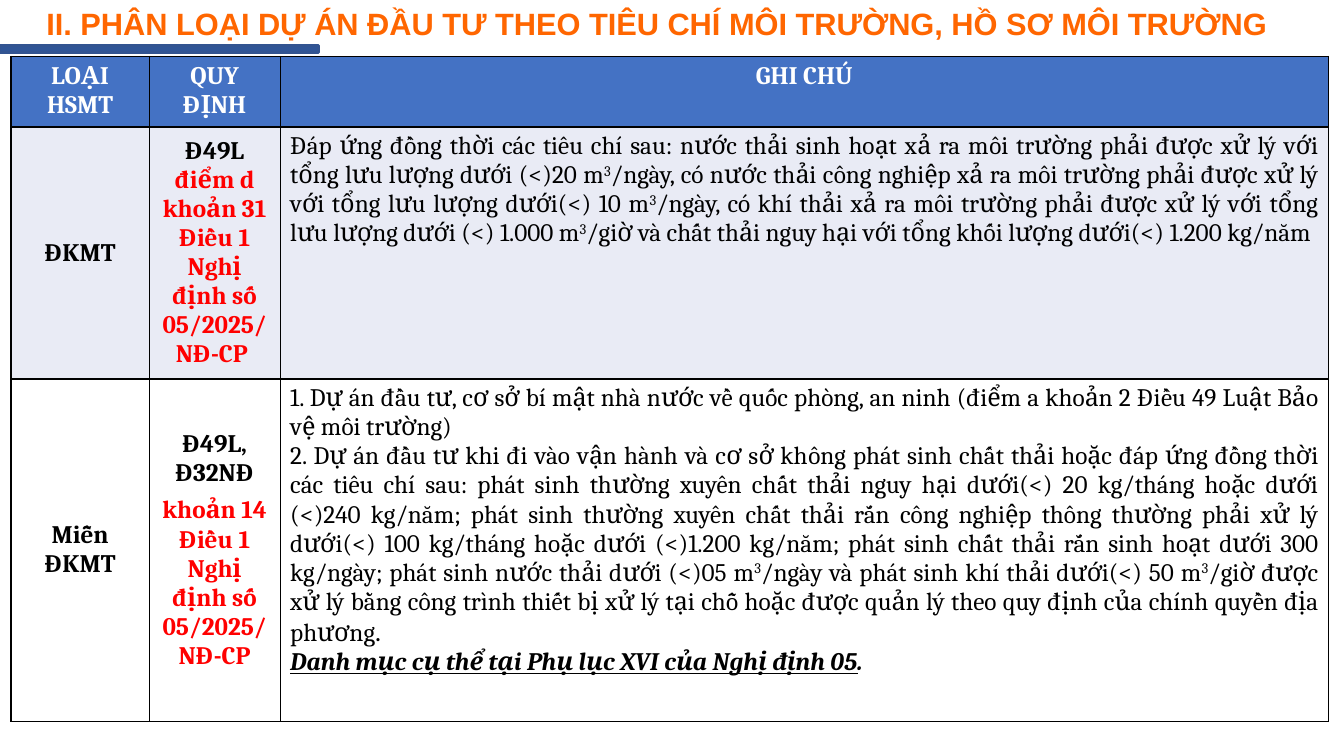
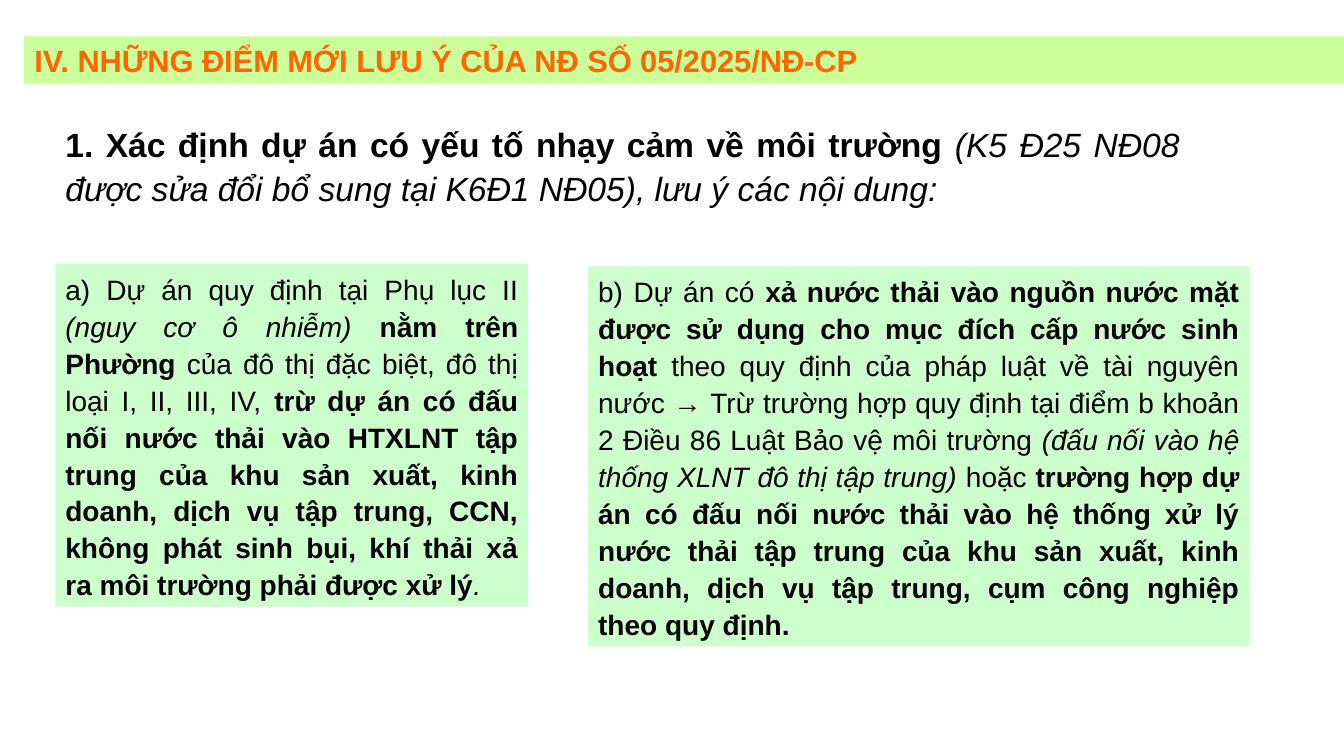
from dataclasses import dataclass

from lxml import etree
from pptx import Presentation
from pptx.dml.color import RGBColor
from pptx.enum import text as t
from pptx.enum.shapes import MSO_SHAPE
from pptx.oxml.ns import qn
from pptx.util import Pt


@dataclass(frozen=True)
class Theme:
    title: str = "FF6600"
    title_band: str = "CCFF99"
    note_fill: str = "CCFFCC"
    bar: str = "2F5597"
    bar_line: str = "325491"
    header: str = "4472C4"
    row_fills: tuple = ("E9EBF5", "FFFFFF")
    ink: str = "000000"
    white: str = "FFFFFF"
    alert: str = "FF0000"
    sans: str = "Arial"
    serif: str = "Cambria"
    alternate: str = "Lato"
    title_size: int = 22
    lead_size: int = 24
    note_size: int = 20
    table_size: int = 18


THEME = Theme()
SLIDE_W, SLIDE_H = 960, 540
CENTER, JUSTIFY, LEFT = t.PP_ALIGN.CENTER, t.PP_ALIGN.JUSTIFY, t.PP_ALIGN.LEFT
TOP, MIDDLE = t.MSO_ANCHOR.TOP, t.MSO_ANCHOR.MIDDLE

# A paragraph is a list of (text, style) runs; a style is a set of words:
# bold, italic, underline, super, alert, alternate.
CLASSES_TITLE = "II. PHÂN LOẠI DỰ ÁN ĐẦU TƯ THEO TIÊU CHÍ MÔI TRƯỜNG, HỒ SƠ MÔI TRƯỜNG"
CLASSES_HEADER = ["LOẠI HSMT", "QUY ĐỊNH", "GHI CHÚ"]
CUBED = ("3", "super")
CLASSES_ROWS = [
    (
        [[("ĐKMT", "bold")]],
        [[("Đ49L ", "bold"),
          ("điểm d khoản 31 Điều 1 Nghị định số 05/2025/NĐ-CP ", "bold alert")]],
        [[("Đáp ứng đồng thời các tiêu chí sau: nước thải sinh hoạt xả ra môi trường phải "
           "được xử lý với tổng lưu lượng dưới (<)20 m", ""), CUBED,
          ("/ngày, có nước thải công nghiệp xả ra môi trường phải được xử lý với tổng lưu "
           "lượng dưới(<) 10 m", ""), CUBED,
          ("/ngày, có khí thải xả ra môi trường phải được xử lý với tổng lưu lượng dưới "
           "(<) 1.000 m", ""), CUBED,
          ("/giờ và chất thải nguy hại với tổng khối lượng dưới(<) 1.200 kg/năm", "")]],
    ),
    (
        [[("Miễn ĐKMT", "bold")]],
        [[("Đ49L, Đ32NĐ", "bold")],
         [("khoản 14 Điều 1 Nghị định số 05/2025/NĐ-CP", "bold alert")]],
        [[("1. Dự án đầu tư, cơ sở bí mật nhà nước về quốc phòng, an ninh (điểm a khoản 2 "
           "Điều 49 Luật Bảo vệ môi trường)", "")],
         [("2. Dự án đầu tư khi đi vào vận hành và cơ sở không phát sinh chất thải hoặc đáp "
           "ứng đồng thời các tiêu chí sau: phát sinh thường xuyên chất thải nguy hại dưới(<) "
           "20 kg/tháng hoặc dưới (<)240 kg/năm; phát sinh thường xuyên chất thải rắn công "
           "nghiệp thông thường phải xử lý dưới(<) 100 kg/tháng hoặc dưới (<)1.200 kg/năm; "
           "phát sinh chất thải rắn sinh hoạt dưới 300 kg/ngày; phát sinh nước thải dưới "
           "(<)05 m", ""), CUBED,
          ("/ngày và phát sinh khí thải dưới(<) 50 m", ""), CUBED,
          ("/giờ được xử lý bằng công trình thiết bị xử lý tại chỗ hoặc được quản lý theo "
           "quy định của chính quyền địa phương", ""), (".", "alternate")],
         [("Danh mục cụ thể tại Phụ lục XVI của Nghị định 05", "bold italic underline"),
          (".", "bold italic")]],
    ),
]
COLUMN_WIDTHS = [98.6, 93.6, 748.8]
ROW_HEIGHTS = [50.4, 180, 244.6]

CHANGES_TITLE = "IV. NHỮNG ĐIỂM MỚI LƯU Ý CỦA NĐ SỐ 05/2025/NĐ-CP"
LEAD = [("1. Xác định dự án có yếu tố nhạy cảm về môi trường ", "bold"),
        ("(K5 Đ25 NĐ08 được sửa đổi bổ sung tại K6Đ1 NĐ05), lưu ý các nội dung:", "italic")]
NOTE_A = [("a) Dự án quy định tại Phụ lục II ", ""),
          ("(nguy cơ ô nhiễm) ", "italic"),
          ("nằm trên Phường", "bold"),
          (" của đô thị đặc biệt, đô thị loại I, II, III, IV, ", ""),
          ("trừ dự án có đấu nối nước thải vào HTXLNT tập trung của khu sản xuất, kinh doanh, "
           "dịch vụ tập trung, CCN, không phát sinh bụi, khí thải xả ra môi trường phải được "
           "xử lý", "bold"),
          (".", "italic")]
NOTE_B = [("b) Dự án có ", ""),
          ("xả nước thải vào nguồn nước mặt được sử dụng cho mục đích cấp nước sinh hoạt ",
           "bold"),
          ("theo quy định của pháp luật về tài nguyên nước ", ""),
          ("→ ", "italic"),
          ("Trừ trường hợp quy định tại điểm b khoản 2 Điều 86 Luật Bảo vệ môi trường ", ""),
          ("(đấu nối vào hệ thống XLNT đô thị tập trung) ", "italic"),
          ("hoặc ", ""),
          ("trường hợp dự án có đấu nối nước thải vào hệ thống xử lý nước thải tập trung của "
           "khu sản xuất, kinh doanh, dịch vụ tập trung, cụm công nghiệp theo quy định.",
           "bold")]
# paragraph, (left, top, width, height), size, fill
CHANGES_BOXES = [
    (LEAD, (39.6, 82, 810, 80), THEME.lead_size, None),
    (NOTE_A, (39.6, 188.6, 337.7, 244.8), THEME.note_size, THEME.note_fill),
    (NOTE_B, (420.2, 190.2, 472.3, 271.4), THEME.note_size, THEME.note_fill),
]


def paint(part, color):
    part.fill.solid()
    part.fill.fore_color.rgb = RGBColor.from_string(color)


def write(frame, paragraphs, size, font=THEME.sans, color=THEME.ink, align=LEFT,
          line_spacing=1.0, space_after=0):
    frame.word_wrap = True
    for index, runs in enumerate(paragraphs):
        paragraph = frame.add_paragraph() if index else frame.paragraphs[0]
        paragraph.alignment = align
        paragraph.line_spacing = line_spacing
        paragraph.space_before = Pt(0)
        paragraph.space_after = Pt(space_after)
        for words, style in runs:
            styles = style.split()
            run = paragraph.add_run()
            run.text = words
            face = run.font
            face.size = Pt(size)
            face.name = THEME.alternate if "alternate" in styles else font
            face.bold = "bold" in styles
            face.italic = "italic" in styles
            face.underline = "underline" in styles
            face.color.rgb = RGBColor.from_string(THEME.alert if "alert" in styles else color)
            if "super" in styles:
                face._element.set("baseline", "30000")


def add_titled_slide(deck, title, left, top, band=None):
    """Add a slide whose title runs from left to the slide's right edge."""
    slide = deck.slides.add_slide(deck.slide_layouts[5])
    heading = slide.shapes.title
    heading.left, heading.top = Pt(left), Pt(top)
    heading.width, heading.height = Pt(SLIDE_W - left), Pt(33.8)
    if band:
        paint(heading, band)
    frame = heading.text_frame
    frame.auto_size = t.MSO_AUTO_SIZE.NONE
    frame.vertical_anchor = TOP
    write(frame, [[(title, "bold")]], THEME.title_size, color=THEME.title)
    return slide


def border_cell(cell):
    properties = cell._tc.get_or_add_tcPr()
    for position, side in enumerate(("lnL", "lnR", "lnT", "lnB")):
        line = etree.Element(qn(f"a:{side}"), w=str(Pt(1)))
        fill = etree.SubElement(line, qn("a:solidFill"))
        etree.SubElement(fill, qn("a:srgbClr"), val=THEME.ink)
        properties.insert(position, line)


def fill_cell(cell, paragraphs, fill, anchor=TOP, **text_format):
    cell.vertical_anchor = anchor
    paint(cell, fill)
    border_cell(cell)
    write(cell.text_frame, paragraphs, THEME.table_size, font=THEME.serif, **text_format)


def build_classes(deck):
    slide = add_titled_slide(deck, CLASSES_TITLE, 25.9, 0)
    bar = slide.shapes.add_shape(MSO_SHAPE.RECTANGLE, Pt(0), Pt(32.4), Pt(227.5), Pt(5))
    bar.shadow.inherit = False
    paint(bar, THEME.bar)
    bar.line.color.rgb = RGBColor.from_string(THEME.bar_line)
    bar.line.width = Pt(2)

    table = slide.shapes.add_table(
        len(ROW_HEIGHTS), len(COLUMN_WIDTHS), Pt(7.9), Pt(40.3),
        Pt(sum(COLUMN_WIDTHS)), Pt(sum(ROW_HEIGHTS))).table
    for column, width in zip(table.columns, COLUMN_WIDTHS):
        column.width = Pt(width)
    for row, height in zip(table.rows, ROW_HEIGHTS):
        row.height = Pt(height)
    for column, label in enumerate(CLASSES_HEADER):
        fill_cell(table.cell(0, column), [[(label, "bold")]], THEME.header,
                  color=THEME.white, align=CENTER)
    for row, (entries, fill) in enumerate(zip(CLASSES_ROWS, THEME.row_fills), 1):
        *labels, remark = entries
        for column, label in enumerate(labels):
            fill_cell(table.cell(row, column), label, fill, anchor=MIDDLE,
                      align=CENTER, space_after=6)
        fill_cell(table.cell(row, len(labels)), remark, fill, align=JUSTIFY)


def build_changes(deck):
    slide = add_titled_slide(deck, CHANGES_TITLE, 17.3, 25.9, band=THEME.title_band)
    for paragraph, bounds, size, fill in CHANGES_BOXES:
        box = slide.shapes.add_textbox(*map(Pt, bounds))
        if fill:
            paint(box, fill)
        write(box.text_frame, [paragraph], size, align=JUSTIFY, line_spacing=1.1,
              space_after=12)


def main():
    deck = Presentation()
    deck.slide_width, deck.slide_height = Pt(SLIDE_W), Pt(SLIDE_H)
    build_classes(deck)
    build_changes(deck)
    deck.save("out.pptx")


if __name__ == "__main__":
    main()
